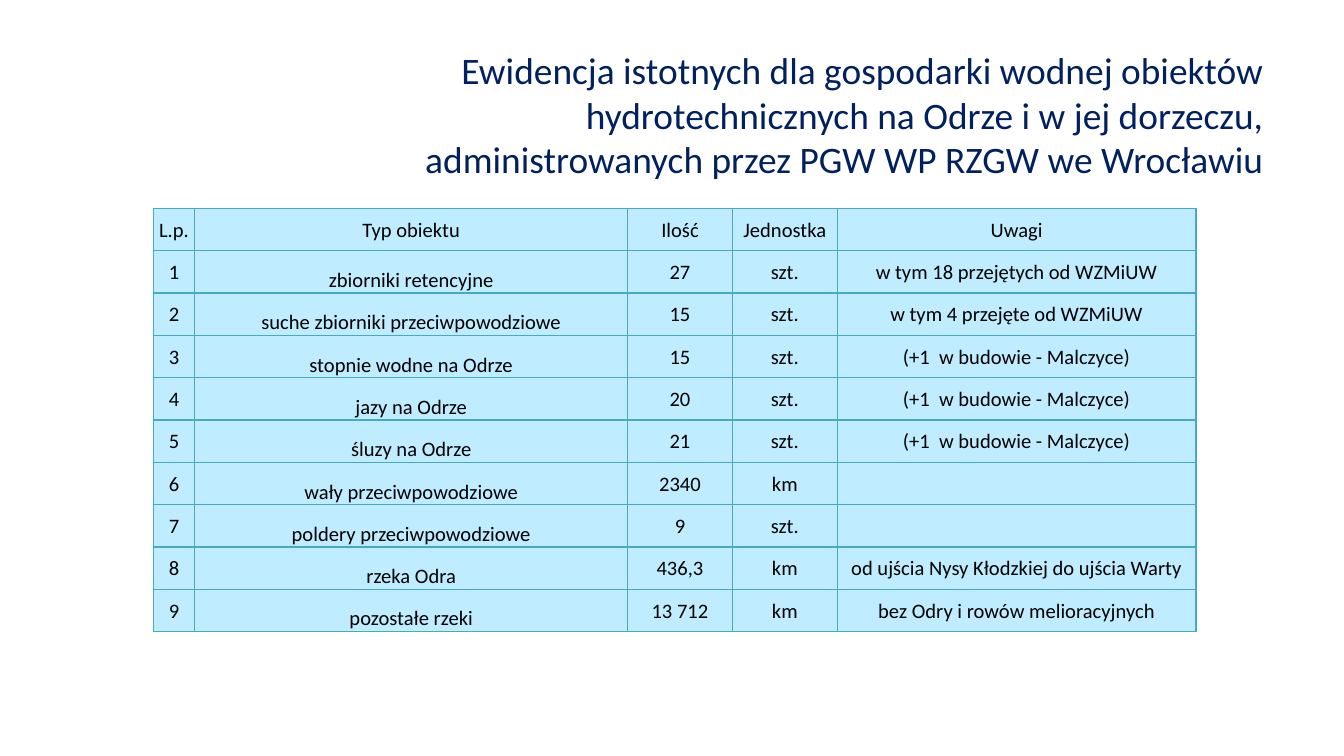
"""Builds a slide listing the hydrotechnical structures on the Odra river."""
import pptx
import pptx.dml.color
import pptx.enum.text
import pptx.oxml
import pptx.oxml.ns
import pptx.util
from pptx.util import Inches

NAVY = pptx.dml.color.RGBColor(0x00, 0x20, 0x60)
BLACK = pptx.dml.color.RGBColor(0x00, 0x00, 0x00)
PALE_BLUE = pptx.dml.color.RGBColor(0xBF, 0xEC, 0xFF)
TEAL = pptx.dml.color.RGBColor(0x46, 0xAA, 0xC5)
ALIGN = pptx.enum.text.PP_ALIGN
ANCHOR = pptx.enum.text.MSO_ANCHOR

HEADING = (
    "Ewidencja istotnych dla gospodarki wodnej obiektów hydrotechnicznych "
    "na Odrze i w jej dorzeczu, administrowanych przez PGW WP RZGW we Wrocławiu"
)
HEADERS = ("L.p.", "Typ obiektu", "Ilość", "Jednostka", "Uwagi")
STRUCTURES = [
    ("zbiorniki retencyjne", "27", "szt.", "w tym 18 przejętych od WZMiUW"),
    ("suche zbiorniki przeciwpowodziowe", "15", "szt.", "w tym 4 przejęte od WZMiUW"),
    ("stopnie wodne na Odrze", "15", "szt.", "(+1  w budowie - Malczyce)"),
    ("jazy na Odrze", "20", "szt.", "(+1  w budowie - Malczyce)"),
    ("śluzy na Odrze", "21", "szt.", "(+1  w budowie - Malczyce)"),
    ("wały przeciwpowodziowe", "2340", "km", ""),
    ("poldery przeciwpowodziowe", "9", "szt.", ""),
    ("rzeka Odra", "436,3", "km", "od ujścia Nysy Kłodzkiej do ujścia Warty"),
    ("pozostałe rzeki", "13 712", "km", "bez Odry i rowów melioracyjnych"),
]
COLUMN_WIDTHS = (0.31, 3.22, 0.78, 0.78, 2.67)
TYPE_COLUMN = 1


def write(paragraph, text, size, color, alignment):
    paragraph.alignment = alignment
    run = paragraph.add_run()
    run.text = text
    run.font.name = "Calibri"
    run.font.size = pptx.util.Pt(size)
    run.font.color.rgb = color


def add_borders(cell):
    properties = cell._tc.get_or_add_tcPr()
    for position, side in enumerate(("lnL", "lnR", "lnT", "lnB")):
        border = pptx.oxml.parse_xml(
            f'<a:{side} {pptx.oxml.ns.nsdecls("a")} w="{pptx.util.Pt(0.75)}">'
            f'<a:solidFill><a:srgbClr val="{TEAL}"/></a:solidFill></a:{side}>'
        )
        properties.insert(position, border)


presentation = pptx.Presentation()
presentation.slide_width = Inches(10)
presentation.slide_height = Inches(10 * 9 / 16)
slide = presentation.slides.add_slide(presentation.slide_layouts[6])

heading = slide.shapes.add_textbox(Inches(2.72), Inches(0.3), Inches(6.78), Inches(0.46))
heading.text_frame.word_wrap = True
write(heading.text_frame.paragraphs[0], HEADING, 20, NAVY, ALIGN.RIGHT)

rows = [HEADERS]
for number, structure in enumerate(STRUCTURES, start=1):
    rows.append((str(number), *structure))

register = slide.shapes.add_table(
    len(rows), len(HEADERS), Inches(1.14), Inches(1.55), Inches(7.76), Inches(3.15)
).table
for column, width in zip(register.columns, COLUMN_WIDTHS):
    column.width = Inches(width)

for row_index, row in enumerate(rows):
    register.rows[row_index].height = Inches(3.15 / len(rows))
    for column_index, text in enumerate(row):
        cell = register.cell(row_index, column_index)
        cell.fill.solid()
        cell.fill.fore_color.rgb = PALE_BLUE
        cell.margin_left = cell.margin_right = cell.margin_top = Inches(0.01)
        cell.margin_bottom = 0
        is_type = row_index > 0 and column_index == TYPE_COLUMN
        cell.vertical_anchor = ANCHOR.BOTTOM if is_type else ANCHOR.MIDDLE
        write(cell.text_frame.paragraphs[0], text, 11, BLACK, ALIGN.CENTER)
        add_borders(cell)

presentation.save("out.pptx")
